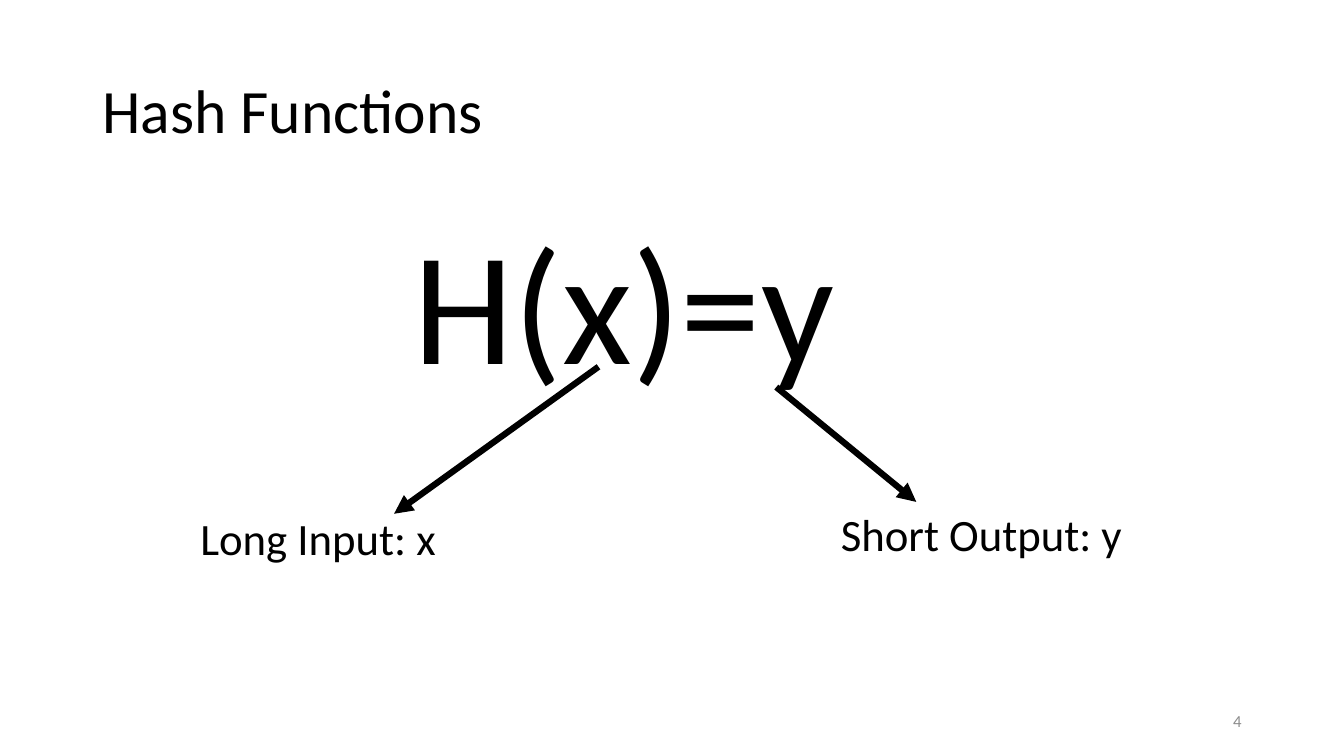
from lxml import etree
from pptx import Presentation
from pptx import util as u
from pptx.dml.color import RGBColor
from pptx.enum import shapes, text
from pptx.oxml import ns

BLACK = RGBColor(0x00, 0x00, 0x00)
GRAY = RGBColor(0x8C, 0x8C, 0x8C)
LEFT, MID, RIGHT = text.PP_ALIGN.LEFT, text.PP_ALIGN.CENTER, text.PP_ALIGN.RIGHT
TOP, HALF = text.MSO_ANCHOR.TOP, text.MSO_ANCHOR.MIDDLE


class Page:
    """Holds the style and the current slide."""
    face = "Calibri"
    width = 4.5

    def __init__(self, deck):
        self.slide = deck.slides.add_slide(deck.slide_layouts[6])

    def label(self, words, box, size, color=BLACK, align=LEFT, anchor=TOP, lead=1.0):
        frame = self.slide.shapes.add_textbox(*map(u.Pt, box)).text_frame
        para = frame.paragraphs[0]
        run = para.add_run()
        run.text = words
        run.font.color.rgb = color
        style = {
            frame: {"word_wrap": True, "vertical_anchor": anchor},
            para: {"alignment": align, "line_spacing": lead},
            run.font: {"name": self.face, "size": u.Pt(size)},
        }
        for part, values in style.items():
            for key, value in values.items():
                setattr(part, key, value)

    def arrow(self, start, end):
        line = self.slide.shapes.add_connector(
            shapes.MSO_CONNECTOR.STRAIGHT, *map(u.Pt, start + end))
        line.line.color.rgb = BLACK
        line.line.width = u.Pt(self.width)
        props = line.line._get_or_add_ln()
        etree.SubElement(props, ns.qn("a:tailEnd"), type="triangle")
        etree.SubElement(line._element.spPr, ns.qn("a:effectLst"))


def main():
    deck = Presentation()
    deck.slide_width, deck.slide_height = u.Pt(960), u.Pt(540)
    page = Page(deck)

    # Title and formula
    page.label("Hash Functions", (66, 28.75, 828, 104.4), 44, anchor=HALF, lead=0.9)
    page.label("H(x)=y", (31.5, 157.5, 828, 342.6), 115, align=MID, lead=0.9)

    # Input and output, each with its arrow
    for words, spot, start, end in (
        ("Long Input: x", (136, 361), (427.5, 262), (281.5, 367)),
        ("Short Output: y", (593.5, 358.5), (554.5, 276.5), (654.5, 358.5)),
    ):
        page.label(words, spot + (343.5, 46), 32)
        page.arrow(start, end)

    # Page number
    page.label("4", (678, 500.5, 216, 28.75), 12, GRAY, RIGHT, HALF)

    deck.save("out.pptx")


if __name__ == "__main__":
    main()
